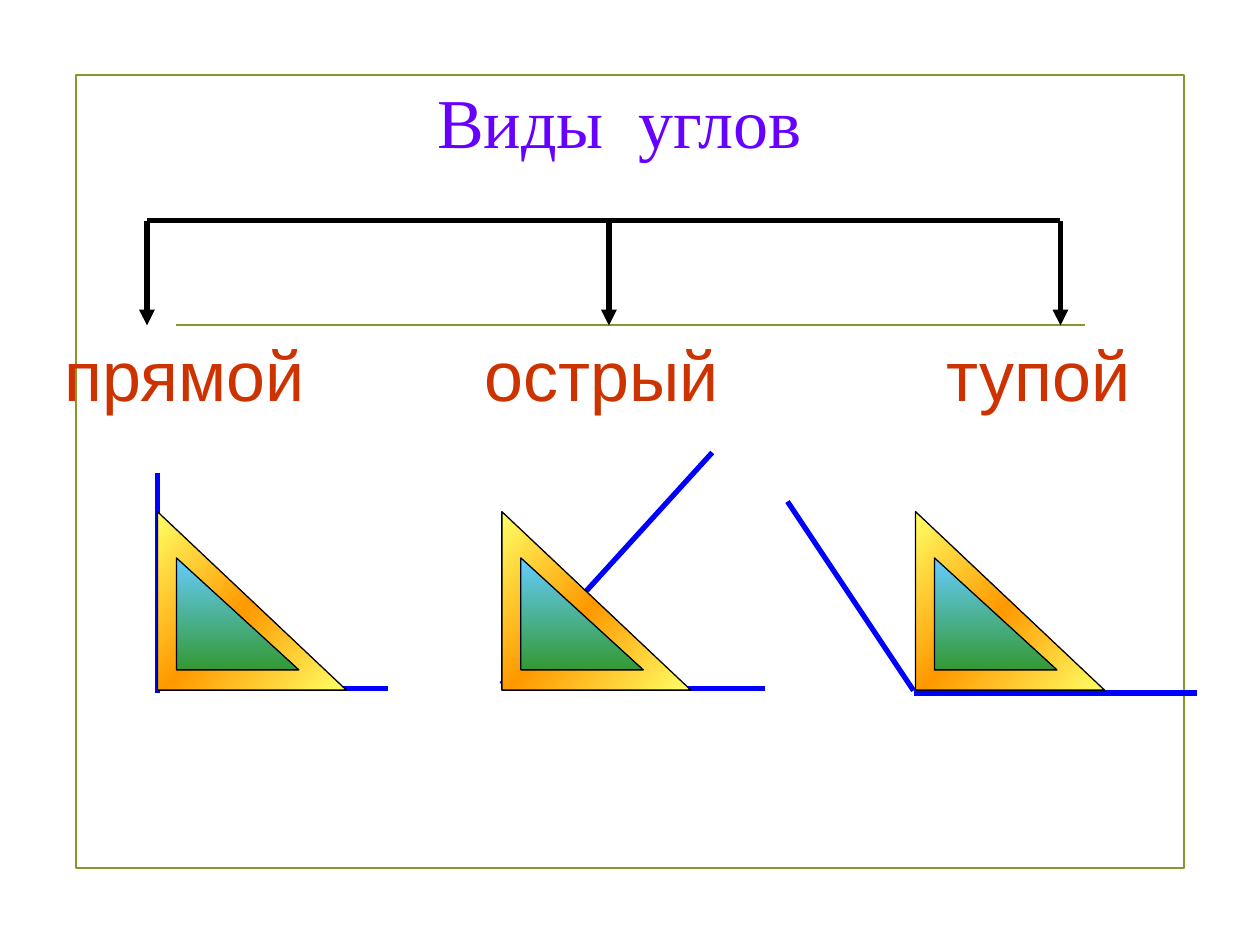
import copy

import pptx
import pptx.dml.color
import pptx.enum.shapes
import pptx.enum.text
import pptx.util
from pptx.oxml.ns import qn
from pptx.oxml.xmlchemy import OxmlElement

Pt = pptx.util.Pt
RGB = pptx.dml.color.RGBColor
Shape = pptx.enum.shapes.MSO_SHAPE
Text = pptx.enum.text

OLIVE = RGB(0x83, 0x99, 0x2A)
VIOLET = RGB(0x66, 0x00, 0xFF)
RED = RGB(0xCC, 0x33, 0x00)
BLUE = RGB(0x00, 0x00, 0xFF)
BLACK = RGB(0x00, 0x00, 0x00)
YELLOW = RGB(0xFF, 0xFF, 0x66)
ORANGE = RGB(0xFF, 0x99, 0x00)
SKY = RGB(0x66, 0xCC, 0xFF)
GREEN = RGB(0x33, 0x99, 0x33)


class Board:
    """Draws styled elements on one slide, with lengths in points."""

    def __init__(self, slide):
        self.shapes = slide.shapes
        self.size = 40
        self.thick = 3
        self.thin = 0.75

    def frame(self, x, y, w, h, color, width):
        box = self.shapes.add_shape(Shape.RECTANGLE, Pt(x), Pt(y), Pt(w), Pt(h))
        box.shadow.inherit = False
        box.fill.background()
        box.line.color.rgb = color
        box.line.width = Pt(width)

    def line(self, x1, y1, x2, y2, color, width=None, arrow=False):
        line = self.shapes.add_connector(
            pptx.enum.shapes.MSO_CONNECTOR.STRAIGHT, Pt(x1), Pt(y1), Pt(x2), Pt(y2))
        line.line.color.rgb = color
        line.line.width = Pt(width or self.thick)
        if arrow:
            tail = OxmlElement("a:tailEnd")
            tail.set("type", "triangle")
            line.line._get_or_add_ln().append(tail)
        line._element.spPr.append(OxmlElement("a:effectLst"))

    def text(self, words, x, y, w, h, font, color, title=False):
        box = self.shapes.add_textbox(Pt(x), Pt(y), Pt(w), Pt(h))
        frame = box.text_frame
        frame.word_wrap = title
        para = frame.paragraphs[0]
        if title:
            frame.vertical_anchor = Text.MSO_ANCHOR.MIDDLE
            para.alignment = Text.PP_ALIGN.CENTER
        else:
            frame.auto_size = Text.MSO_AUTO_SIZE.SHAPE_TO_FIT_TEXT
        para.text = words
        para.font.name = font
        para.font.size = Pt(self.size)
        para.font.color.rgb = color

    def wedge(self, x, y, w, h, colors, angle):
        tri = self.shapes.add_shape(
            Shape.RIGHT_TRIANGLE, Pt(x), Pt(y), Pt(w), Pt(h))
        tri.shadow.inherit = False
        tri.line.color.rgb = BLACK
        tri.line.width = Pt(self.thin)
        tri.fill.gradient()
        tri.fill.gradient_angle = 360 - angle
        stops = tri._element.spPr.find(qn("a:gradFill")).find(qn("a:gsLst"))
        while len(stops) < len(colors):
            stops.append(copy.deepcopy(stops[-1]))
        for i, (stop, color) in enumerate(zip(tri.fill.gradient_stops, colors)):
            stop.color.rgb = color
            stop.position = i / (len(colors) - 1)

    def square(self, x, y):
        self.wedge(x, y, 108, 102, (YELLOW, ORANGE, YELLOW), 45)
        self.wedge(x + 10.8, y + 26.4, 70, 64, (SKY, GREEN), 90)


def main():
    deck = pptx.Presentation()
    deck.slide_width, deck.slide_height = Pt(720), Pt(540)
    board = Board(deck.slides.add_slide(deck.slide_layouts[6]))

    board.frame(43.6, 42.8, 633, 453.2, OLIVE, 1.25)
    board.line(100.5, 185.7, 620, 185.7, OLIVE, 1.25)
    board.text("Виды  углов", 198, 24, 312, 90, "Times New Roman", VIOLET, True)

    board.line(84, 126, 606, 126, BLACK)
    for x in (84, 348, 606):
        board.line(x, 126, x, 186, BLACK, arrow=True)

    for word, x, w in (("прямой", 30, 153), ("острый", 270, 150), ("тупой", 534, 121)):
        board.text(word, x, 186, w, 55.5, "Arial", RED)

    for ray in ((90, 270, 90, 396), (90, 393.6, 222, 393.6),
                (286.6, 393.6, 437, 393.6), (407, 258.6, 286.6, 391),
                (450, 286.6, 522, 394.6), (522, 396, 684, 396)):
        board.line(*ray, BLUE)

    for x in (90, 286.8, 523.2):
        board.square(x, 292.4)

    deck.save("out.pptx")


if __name__ == "__main__":
    main()
